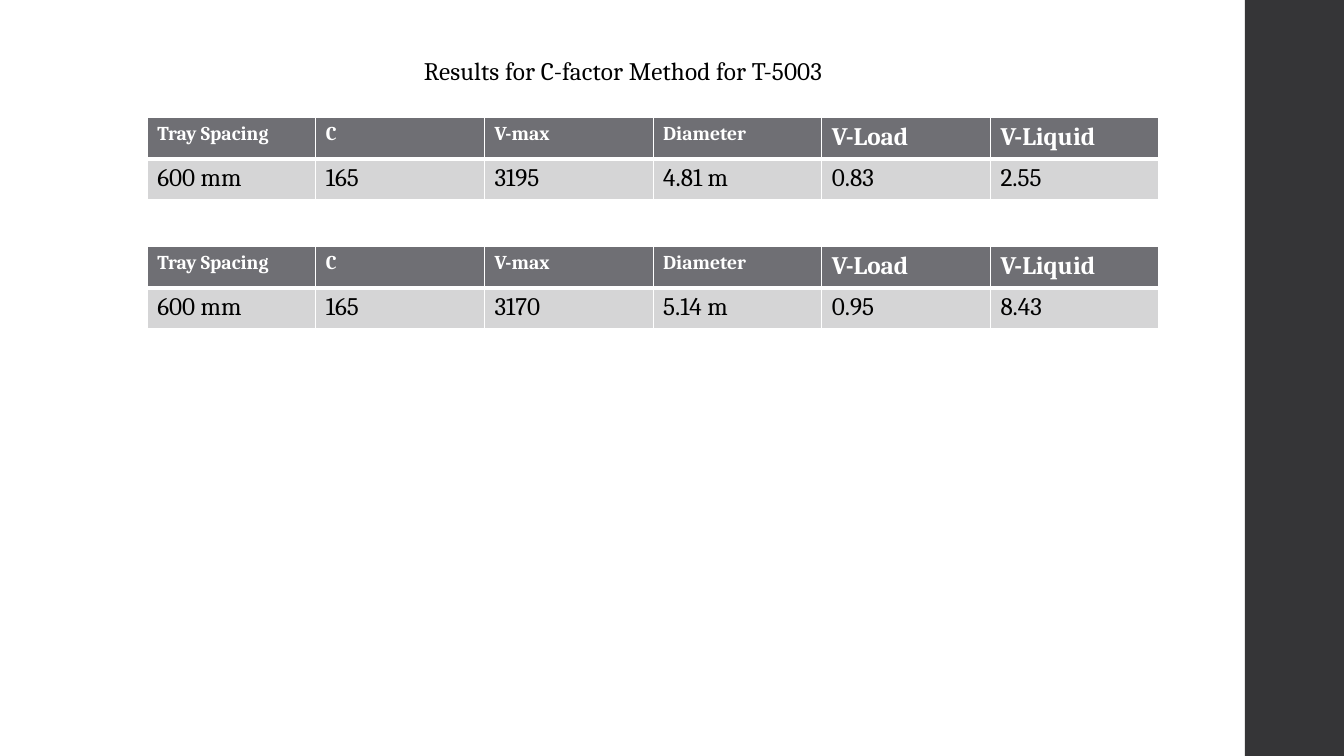
from lxml import etree
from pptx import Presentation
from pptx.dml.color import RGBColor
from pptx.enum.shapes import MSO_SHAPE
from pptx.enum.text import MSO_ANCHOR, PP_ALIGN
from pptx.oxml.ns import qn
from pptx.util import Cm, Pt

RECT = MSO_SHAPE.RECTANGLE
CENTER = PP_ALIGN.CENTER
MIDDLE = MSO_ANCHOR.MIDDLE

BLACK = RGBColor(0x00, 0x00, 0x00)
WHITE = RGBColor(0xFF, 0xFF, 0xFF)
DARK = RGBColor(0x35, 0x35, 0x37)
GRAY = RGBColor(0x6F, 0x6F, 0x74)
LIGHT = RGBColor(0xD5, 0xD5, 0xD6)

HEADS = ["Tray Spacing", "C", "V-max", "Diameter", "V-Load", "V-Liquid"]
HEAD_SIZES = [14] * 4 + [18] * 2
RESULTS = [
    ["600 mm", "165", "3195", "4.81 m", "0.83", "2.55"],
    ["600 mm", "165", "3170", "5.14 m", "0.95", "8.43"],
]
LEFT, TOP, STEP = 3.71, 2.97, 3.25
COL, ROW = 4.25, 1.03


class Deck:
    font = "Cambria"
    size = 18
    thin, thick = 1, 3

    def __init__(self, wide, high):
        self.prs = Presentation()
        self.prs.slide_width = Cm(wide)
        self.prs.slide_height = Cm(high)
        self.slide = self.prs.slides.add_slide(self.prs.slide_layouts[6])

    def label(self, frame, text, size, color, bold=False):
        """Fill the frame with one styled run and return that run."""
        frame.text = text
        run = frame.paragraphs[0].runs[0]
        run.font.name = self.font
        run.font.size = Pt(size)
        run.font.bold = bold
        run.font.color.rgb = color
        return run

    def bar(self, x, y, w, h, color):
        shape = self.slide.shapes.add_shape(RECT, Cm(x), Cm(y), Cm(w), Cm(h))
        shape.shadow.inherit = False
        shape.fill.solid()
        shape.fill.fore_color.rgb = color
        shape.line.fill.background()

    def title(self, x, y, w, h, text):
        box = self.slide.shapes.add_textbox(Cm(x), Cm(y), Cm(w), Cm(h))
        frame = box.text_frame
        frame.word_wrap = True
        frame.vertical_anchor = MIDDLE
        run = self.label(frame, text, self.size, BLACK)
        run._r.get_or_add_rPr().set("spc", "10")
        para = frame.paragraphs[0]
        para.alignment = CENTER
        para.line_spacing = 0.95

    def edge(self, cell, side, width):
        """Draw one white border; side is L, R, T or B."""
        props = cell._tc.get_or_add_tcPr()
        line = etree.SubElement(props, qn(f"a:ln{side}"), w=str(Pt(width)))
        fill = etree.SubElement(line, qn("a:solidFill"))
        etree.SubElement(fill, qn("a:srgbClr"), val=str(WHITE))

    def cell(self, cell, text, size, color, fill, edges, bold):
        self.label(cell.text_frame, text, size, color, bold)
        for side, width in edges.items():
            self.edge(cell, side, width)
        cell.fill.solid()
        cell.fill.fore_color.rgb = fill

    def table(self, x, y, heads, values):
        count = len(heads)
        table = self.slide.shapes.add_table(
            2, count, Cm(x), Cm(y), Cm(COL * count), Cm(ROW * 2)
        ).table
        for col in table.columns:
            col.width = Cm(COL)
        edges = dict.fromkeys("LRTB", self.thin)
        above = edges | {"B": self.thick}
        below = edges | {"T": self.thick}
        for i, (head, value) in enumerate(zip(heads, values)):
            self.cell(table.cell(0, i), head, HEAD_SIZES[i], WHITE, GRAY,
                      above, True)
            self.cell(table.cell(1, i), value, self.size, BLACK, LIGHT,
                      below, False)


def main():
    deck = Deck(33.87, 19.05)
    deck.bar(31.37, 0, 2.5, 19.05, DARK)
    deck.title(0, 1.3, 31.42, 1.03, "Results for C-factor Method for T-5003")
    for i, values in enumerate(RESULTS):
        deck.table(LEFT, TOP + i * STEP, HEADS, values)
    deck.prs.save("out.pptx")


if __name__ == "__main__":
    main()
